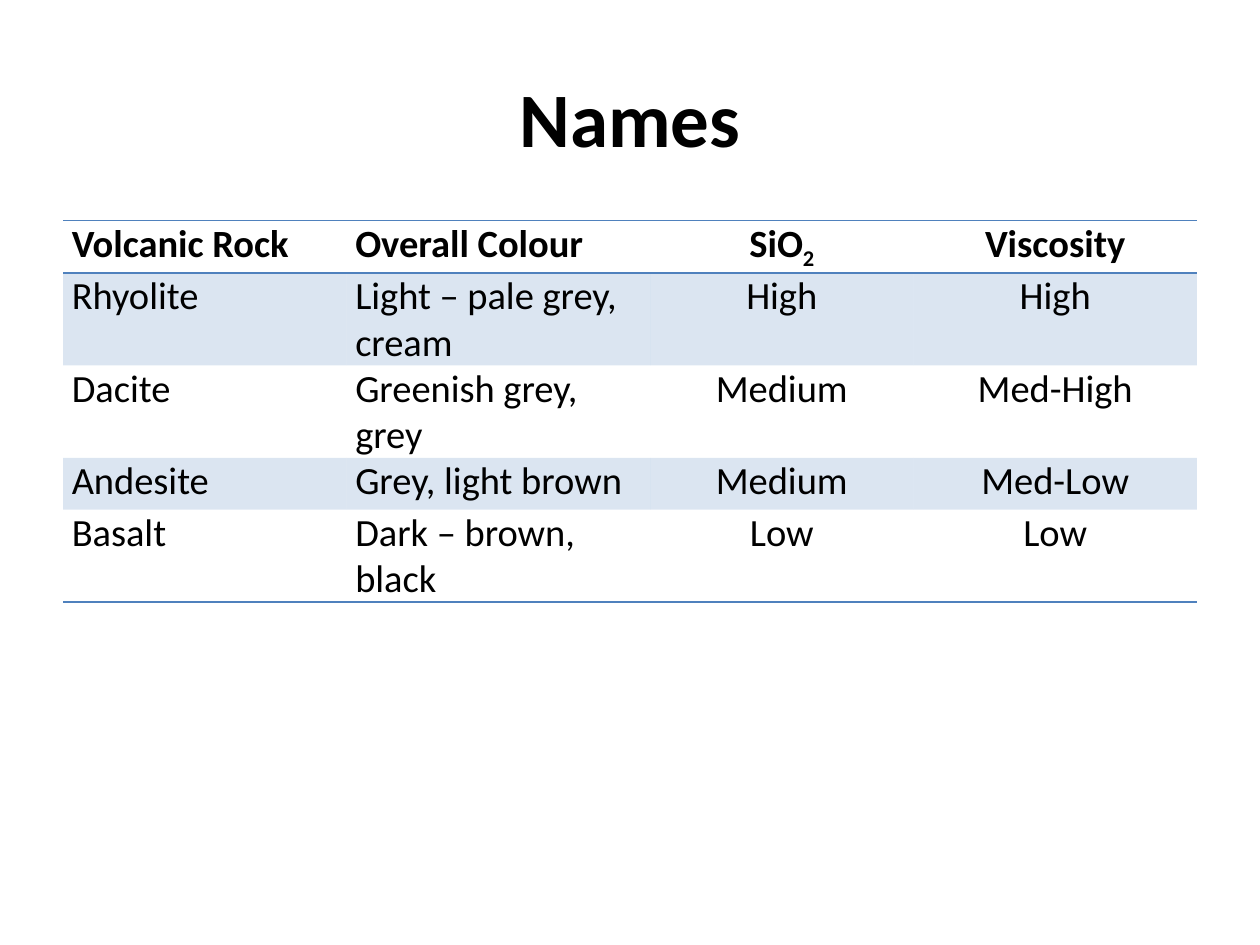
import lxml.etree
import pptx
import pptx.dml.color
import pptx.enum.text
import pptx.oxml.ns
import pptx.util

Inches = pptx.util.Inches
qn = pptx.oxml.ns.qn
align = pptx.enum.text.PP_ALIGN
anchor = pptx.enum.text.MSO_ANCHOR


def color(code):
    return pptx.dml.color.RGBColor.from_string(code)


def write(para, text, size, bold):
    style = {"name": "Calibri", "size": pptx.util.Pt(size), "bold": bold}
    for i, part in enumerate(text.split("|")):
        run = para.add_run()
        run.text = part
        for key, value in style.items():
            setattr(run.font, key, value)
        run.font.color.rgb = color("000000")
        if i:
            run.font._element.set("baseline", "-25000")


deck = pptx.Presentation()
deck.slide_width, deck.slide_height = Inches(10), Inches(7.5)
slide = deck.slides.add_slide(deck.slide_layouts[6])

title = slide.shapes.add_textbox(Inches(0.5), Inches(0.3), Inches(9), Inches(1.25))
frame = title.text_frame
for key, value in {"word_wrap": True, "vertical_anchor": anchor.MIDDLE}.items():
    setattr(frame, key, value)
frame.paragraphs[0].alignment = align.CENTER
write(frame.paragraphs[0], "Names", 44, True)

rocks = [
    ["Volcanic Rock", "Overall Colour", "SiO|2", "Viscosity"],
    ["Rhyolite", "Light – pale grey, cream", "High", "High"],
    ["Dacite", "Greenish grey, grey", "Medium", "Med-High"],
    ["Andesite", "Grey, light brown", "Medium", "Med-Low"],
    ["Basalt", "Dark – brown, black", "Low", "Low"],
]
widths = [2.25, 2.41, 2.09, 2.25]
high = 0.41
edges = {0: ["a:lnT", "a:lnB"], len(rocks) - 1: ["a:lnB"]}
inset = {
    "margin_left": Inches(0.07),
    "margin_right": Inches(0.07),
    "margin_top": 0,
    "margin_bottom": 0,
}

table = slide.shapes.add_table(
    len(rocks), len(widths), Inches(0.5), Inches(1.75), Inches(9), Inches(high * len(rocks))
).table
table.horz_banding = False
plain = "{2D5ABB26-0587-4C30-8999-92F81FD0307C}"
table._tbl.tblPr.find(qn("a:tableStyleId")).text = plain
for col, width in zip(table.columns, widths):
    col.width = Inches(width)

for r, rock in enumerate(rocks):
    table.rows[r].height = Inches(high)
    for c, text in enumerate(rock):
        cell = table.cell(r, c)
        for key, value in inset.items():
            setattr(cell, key, value)
        para = cell.text_frame.paragraphs[0]
        para.alignment = align.CENTER if c > 1 else align.LEFT
        write(para, text, 22, r == 0)
        props = cell._tc.get_or_add_tcPr()
        if r % 2:
            cell.fill.solid()
            cell.fill.fore_color.rgb = color("4F81BD")
            tint = props.find(".//" + qn("a:srgbClr"))
            lxml.etree.SubElement(tint, qn("a:alpha"), val="20000")
        else:
            cell.fill.background()
        for i, edge in enumerate(edges.get(r, [])):
            line = lxml.etree.Element(qn(edge), w=str(pptx.util.Pt(1)))
            fill = lxml.etree.SubElement(line, qn("a:solidFill"))
            lxml.etree.SubElement(fill, qn("a:srgbClr"), val="4F81BD")
            props.insert(i, line)

deck.save("out.pptx")
